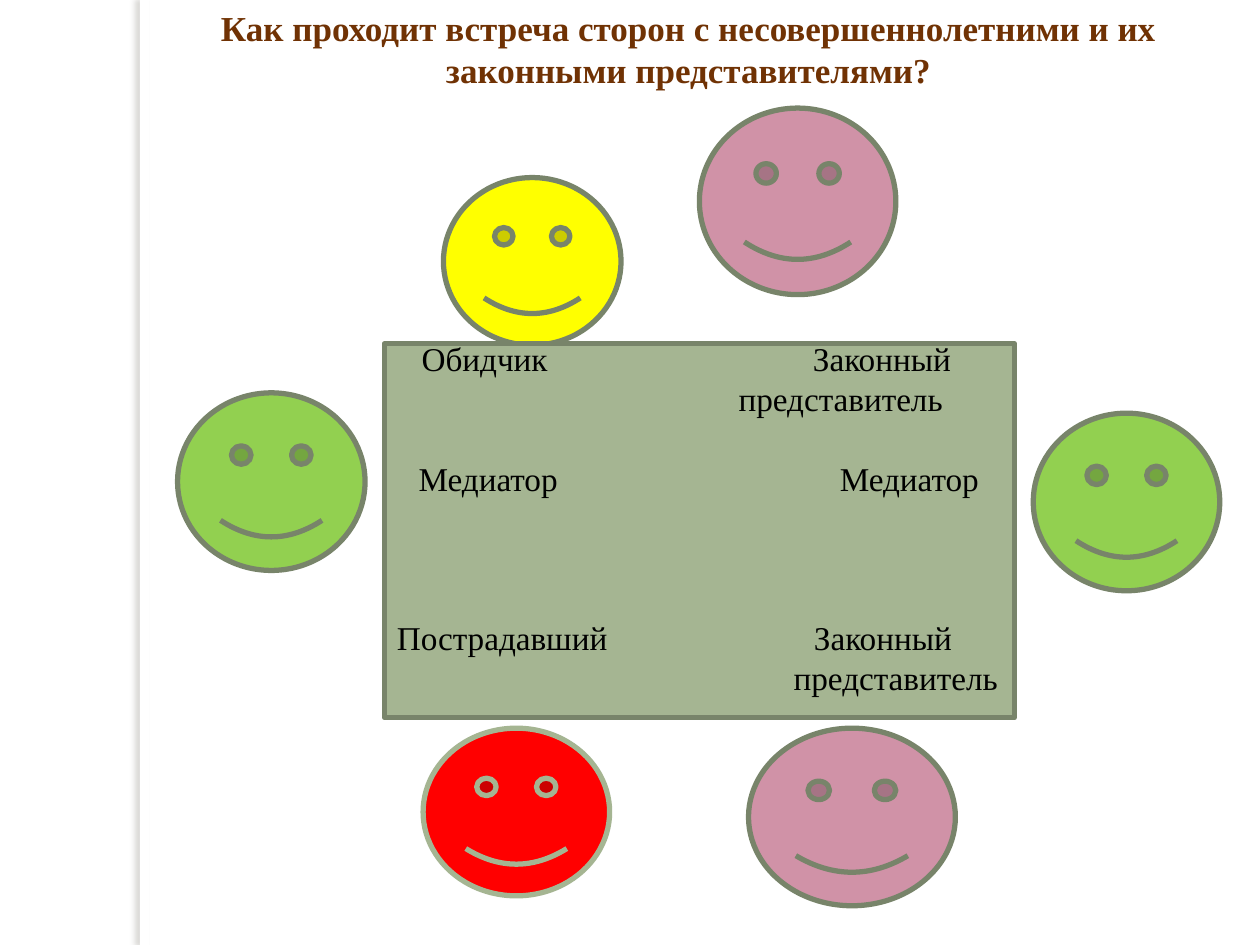
"""Build the slide that shows who sits where when the sides meet."""

from dataclasses import dataclass
from typing import Any, NamedTuple

from lxml.etree import SubElement as Sub
from pptx import Presentation as Deck
from pptx.dml.color import RGBColor as Color
from pptx.enum.shapes import MSO_SHAPE as Kind
from pptx.enum.text import MSO_ANCHOR as Anchor, PP_ALIGN as Align
from pptx.oxml.ns import qn
from pptx.util import Cm, Pt


@dataclass(frozen=True)
class Theme:
    font: str = "Times New Roman"
    title: str = "703204"
    ink: str = "000000"
    white: str = "FFFFFF"
    shade: str = "736F63"
    edge: str = "78846A"
    sage: str = "A5B592"
    yellow: str = "FFFF00"
    green: str = "92D050"
    red: str = "FF0000"
    pink: str = "D092A7"
    head: float = 20
    body: float = 19
    line: float = 3


THEME = Theme()


class Box(NamedTuple):
    left: float
    top: float
    width: float
    height: float


class Face(NamedTuple):
    box: Box
    fill: str
    edge: str = THEME.edge


class Row(NamedTuple):
    words: tuple[str, ...]
    tabs: tuple[float, ...]
    gap: float = 0


TITLE = "Как проходит встреча сторон с несовершеннолетними и их законными представителями?"
STRIP = Box(2.82, 0, 0.2, 19.05)
HEAD = Box(2.97, 0, 21.82, 1.96)
TABLE = Box(7.75, 6.93, 12.7, 7.54)
FIRST = Face(Box(8.94, 3.58, 3.58, 3.38), THEME.yellow)
FACES = (
    Face(Box(3.58, 7.92, 3.78, 3.58), THEME.green),
    Face(Box(20.83, 8.33, 3.76, 3.58), THEME.green),
    Face(Box(8.53, 14.68, 3.76, 3.38), THEME.red, THEME.sage),
    Face(Box(14.1, 2.18, 3.96, 3.76), THEME.pink),
    Face(Box(15.09, 14.68, 4.17, 3.58), THEME.pink),
)
ROWS = (
    Row(("Обидчик", "Законный"), (0.5, 8.39)),
    Row(("представитель",), (6.89,)),
    Row(("Медиатор", "Медиатор"), (0.44, 8.93), 23),
    Row(("Пострадавший", "Законный"), (0, 8.41), 68),
    Row(("представитель",), (8,)),
)


def assign(item: Any, form: dict[str, Any]) -> None:
    """Set each named value on the item."""
    for name, value in form.items():
        setattr(item, name, value)


def place(box: Box) -> tuple[Cm, ...]:
    """Turn a box into lengths."""
    return tuple(Cm(side) for side in box)


def draw_shape(slide: Any, kind: Kind, box: Box, fill: str, edge: str = "") -> Any:
    """Draw a flat shape, with an outline when an edge colour is given."""
    shape = slide.shapes.add_shape(kind, *place(box))
    shape.shadow.inherit = False
    shape.fill.solid()
    shape.fill.fore_color.rgb = Color.from_string(fill)
    if edge:
        shape.line.color.rgb = Color.from_string(edge)
        shape.line.width = Pt(THEME.line)
    else:
        shape.line.fill.background()
    return shape


def draw_face(slide: Any, face: Face) -> None:
    """Draw one person at the table."""
    draw_shape(slide, Kind.SMILEY_FACE, face.box, face.fill, face.edge)


def write(para: Any, text: str, size: float, ink: str, bold: bool = False) -> None:
    """Add one run of styled text."""
    run = para.add_run()
    run.text = text
    assign(run.font, {"name": THEME.font, "size": Pt(size), "bold": bold})
    run.font.color.rgb = Color.from_string(ink)


def add_tabs(para: Any, stops: tuple[float, ...]) -> None:
    """Give a paragraph its left tab stops."""
    tabs = Sub(para._p.get_or_add_pPr(), qn("a:tabLst"))
    for stop in stops:
        Sub(tabs, qn("a:tab"), pos=str(Cm(stop)), algn="l")


def draw_strip(slide: Any) -> None:
    """Draw the side strip with its soft shadow on the left."""
    strip = draw_shape(slide, Kind.RECTANGLE, STRIP, THEME.white)
    list_ = strip._element.spPr.find(qn("a:effectLst"))
    cast = Sub(list_, qn("a:outerShdw"), blurRad=str(Pt(3)), dist=str(Pt(3)),
               dir="10800000", algn="tl", rotWithShape="0")
    tint = Sub(cast, qn("a:srgbClr"), val=THEME.shade)
    Sub(tint, qn("a:alpha"), val="25000")


def draw_title(slide: Any) -> None:
    """Write the title."""
    frame = slide.shapes.add_textbox(*place(HEAD)).text_frame
    frame.word_wrap = True
    para = frame.paragraphs[0]
    para.alignment = Align.CENTER
    write(para, TITLE, THEME.head, THEME.title, True)


def draw_table(slide: Any) -> None:
    """Draw the table top and name its seats."""
    frame = draw_shape(slide, Kind.RECTANGLE, TABLE, THEME.sage, THEME.edge).text_frame
    assign(frame, {"word_wrap": True, "vertical_anchor": Anchor.TOP,
                   "margin_left": Cm(0.25), "margin_right": Cm(0),
                   "margin_top": Cm(-0.1), "margin_bottom": Cm(0)})
    for place_, row in enumerate(ROWS):
        para = frame.add_paragraph() if place_ else frame.paragraphs[0]
        assign(para, {"alignment": Align.LEFT, "space_before": Pt(row.gap)})
        stops = tuple(stop for stop in row.tabs if stop)
        add_tabs(para, stops)
        lead = "\t" if row.tabs[0] else ""
        write(para, lead + "\t".join(row.words), THEME.body, THEME.ink)


def main() -> None:
    """Build and save the deck."""
    deck = Deck()
    assign(deck, {"slide_width": Cm(25.4), "slide_height": Cm(19.05)})
    slide = deck.slides.add_slide(deck.slide_layouts[6])
    draw_strip(slide)
    draw_title(slide)
    draw_face(slide, FIRST)
    draw_table(slide)
    for face in FACES:
        draw_face(slide, face)
    deck.save("out.pptx")


if __name__ == "__main__":
    main()
